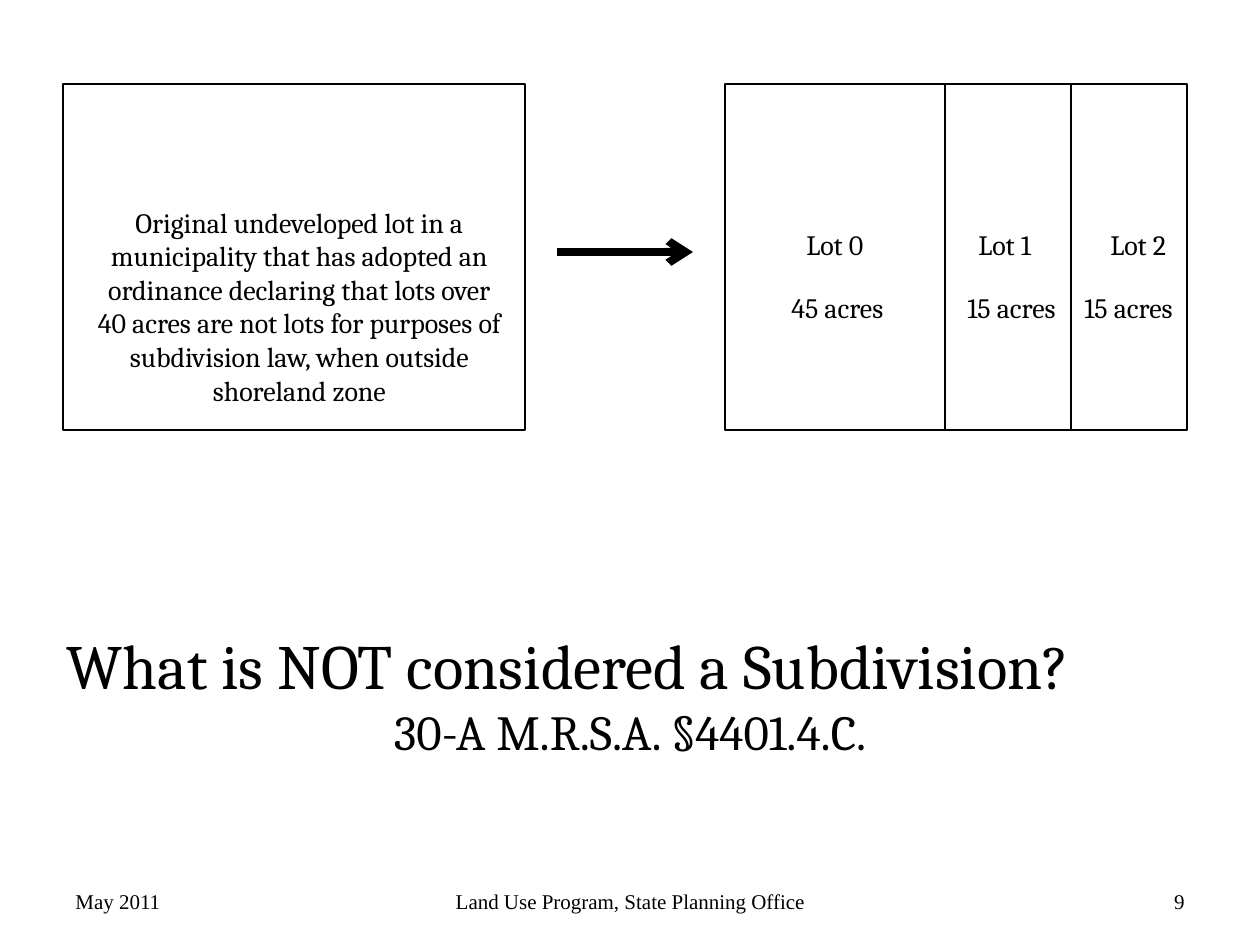
from lxml.etree import SubElement
from pptx import Presentation
from pptx.dml.color import RGBColor
from pptx.enum.shapes import MSO_CONNECTOR, MSO_SHAPE
from pptx.enum.text import MSO_ANCHOR, MSO_AUTO_SIZE, PP_ALIGN
from pptx.oxml.ns import qn
from pptx.util import Pt

PX = 914400 / 126
BLACK, WHITE = "000000", "FFFFFF"
LEFT, CENTER, RIGHT = PP_ALIGN.LEFT, PP_ALIGN.CENTER, PP_ALIGN.RIGHT


def emu(*lengths):
    return [round(n * PX) for n in lengths]


def write(p, text, size, font="Cambria", align=LEFT):
    p.text = text
    p.alignment = align
    p.font.size = Pt(size)
    p.font.name = font
    p.font.color.rgb = RGBColor.from_string(BLACK)


prs = Presentation()
prs.slide_width, prs.slide_height = emu(1260, 945)
s = prs.slides.add_slide(prs.slide_layouts[5])

# Title with the statute reference below it
title = s.shapes.title
title.left, title.top, title.width, title.height = emu(54, 620, 1152, 149)
tf = title.text_frame
tf.auto_size = MSO_AUTO_SIZE.NONE
tf.vertical_anchor = MSO_ANCHOR.TOP
write(tf.paragraphs[0], "What is NOT considered a Subdivision?", 36)
write(tf.add_paragraph(), "30-A M.R.S.A. §4401.4.C.", 28, align=CENTER)

# The lot before and after it is divided
top, height = 84, 346
for left, filled in [(63, True), (725, False)]:
    sp = s.shapes.add_shape(MSO_SHAPE.RECTANGLE, *emu(left, top, 462, height))
    sp.shadow.inherit = False
    if filled:
        sp.fill.solid()
        sp.fill.fore_color.rgb = RGBColor.from_string(WHITE)
    else:
        sp.fill.background()
    sp.line.color.rgb = RGBColor.from_string(BLACK)
    sp.line.width = Pt(1)

# Arrow between the two, then the new lot boundaries
for x1, y1, x2, y2, weight in [
    (557, 252, 693, 252, 4.5),
    (945, top, 945, top + height, 1),
    (1071, top, 1071, top + height, 1),
]:
    line = s.shapes.add_connector(MSO_CONNECTOR.STRAIGHT, *emu(x1, y1, x2, y2))
    line.line.color.rgb = RGBColor.from_string(BLACK)
    line.line.width = Pt(weight)
    if y1 == y2:
        SubElement(line.line._get_or_add_ln(), qn("a:tailEnd"), type="arrow")
    SubElement(line._element.spPr, qn("a:effectLst"))

# Lot names and areas
for name, name_left, area, area_left in [
    ("Lot 0", 794, "45 acres", 779),
    ("Lot 1", 966, "15 acres", 955),
    ("Lot 2", 1098, "15 acres", 1072),
]:
    for text, left, y, width in [(name, name_left, 221, 88), (area, area_left, 284, 125)]:
        tb = s.shapes.add_textbox(*emu(left, y, width, 47))
        tb.text_frame.word_wrap = False
        write(tb.text_frame.paragraphs[0], text, 16)

tb = s.shapes.add_textbox(*emu(84, 199, 431, 217))
tb.text_frame.word_wrap = True
write(
    tb.text_frame.paragraphs[0],
    "Original undeveloped lot in a municipality that has adopted an ordinance "
    "declaring that lots over 40 acres are not lots for purposes of subdivision "
    "law, when outside shoreland zone",
    16,
    align=CENTER,
)

# Footer
for text, left, width, align in [
    ("May 2011", 63, 294, LEFT),
    ("Land Use Program, State Planning Office", 431, 399, CENTER),
    ("9", 903, 294, RIGHT),
]:
    tb = s.shapes.add_textbox(*emu(left, 876, width, 50))
    tf = tb.text_frame
    tf.word_wrap = True
    tf.vertical_anchor = MSO_ANCHOR.MIDDLE
    write(tf.paragraphs[0], text, 12, "Times New Roman", align)

prs.save("out.pptx")
